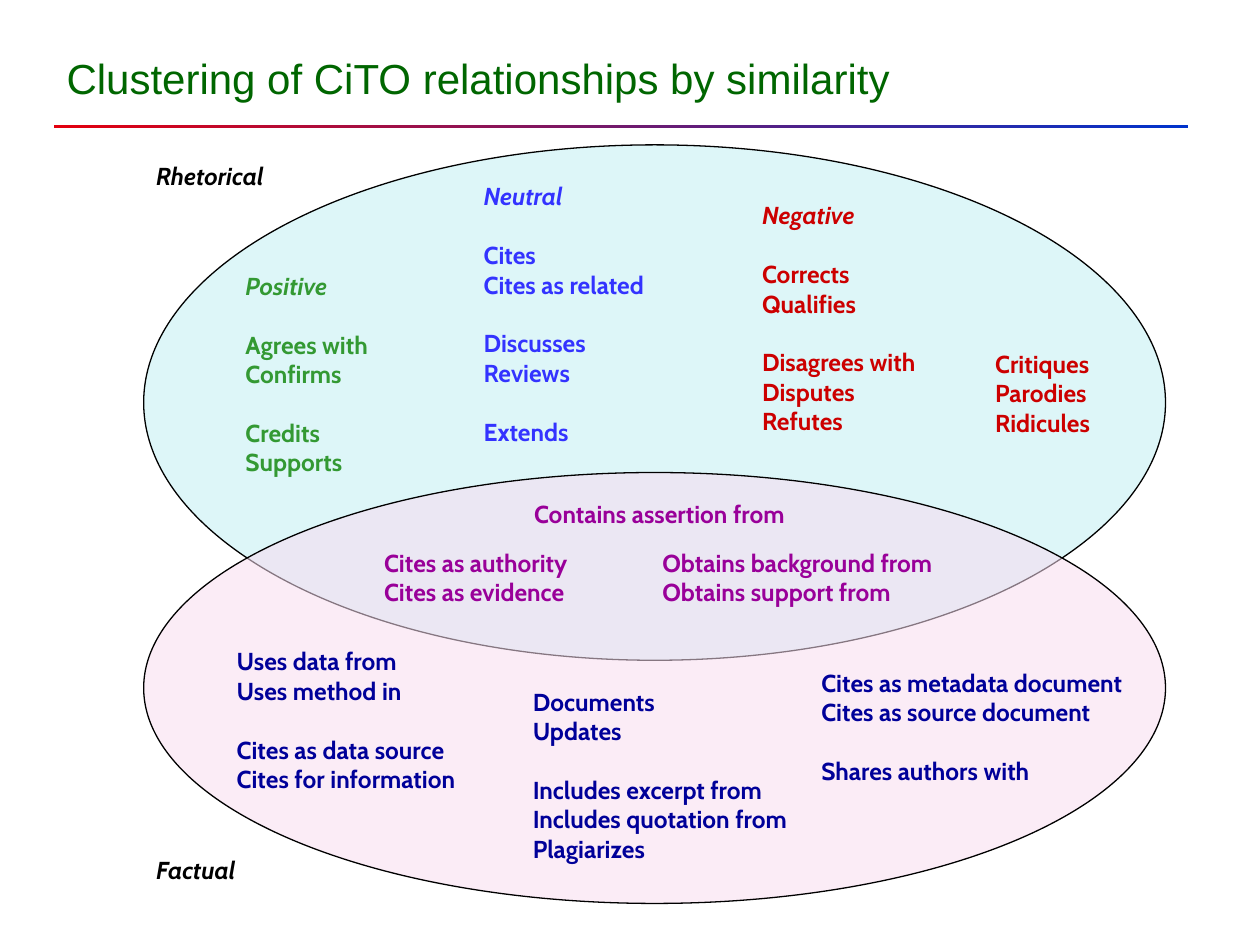
from dataclasses import dataclass

from lxml.etree import SubElement
from pptx import Presentation
from pptx.dml.color import RGBColor
from pptx.enum.shapes import MSO_SHAPE as Shape
from pptx.enum.text import MSO_ANCHOR as Anchor, MSO_AUTO_SIZE as AutoSize
from pptx.oxml.ns import qn
from pptx.util import Inches, Pt

COLUMNS, ROWS = 100, 75


@dataclass(frozen=True)
class Theme:
    title_font: str = "Arial"
    body_font: str = "Cabin"
    title_size: int = 24
    body_size: int = 14
    line_pitch: float = 16.8  # points from one body line to the next
    heading: str = "006600"
    label: str = "000000"
    positive: str = "339933"
    neutral: str = "3333FF"
    negative: str = "CC0000"
    shared: str = "990099"
    factual: str = "000099"
    rhetorical_fill: str = "C4EFF4"
    factual_fill: str = "F8DCF0"
    rule: tuple = ("E3000E", "0033CC")


class Painter:
    def __init__(self, deck, theme):
        self.deck, self.theme = deck, theme
        self.page = deck.slides.add_slide(deck.slide_layouts[6])

    def place(self, left, top, width, height):
        """Turn grid columns and rows into slide lengths."""
        across = self.deck.slide_width / COLUMNS
        down = self.deck.slide_height / ROWS
        return [round(n) for n in
                (left * across, top * down, width * across, height * down)]

    def shape(self, kind, *cells):
        shape = self.page.shapes.add_shape(kind, *self.place(*cells))
        shape.shadow.inherit = False
        return shape

    def rule(self, *cells):
        bar = self.shape(Shape.RECTANGLE, *cells)
        bar.line.fill.background()
        bar.fill.gradient()
        bar.fill.gradient_angle = 0
        for stop, color in zip(bar.fill.gradient_stops, self.theme.rule):
            stop.color.rgb = RGBColor.from_string(color)

    def ellipse(self, *cells, color, opacity):
        oval = self.shape(Shape.OVAL, *cells)
        oval.fill.solid()
        oval.fill.fore_color.rgb = RGBColor.from_string(color)
        tint = oval.fill._xPr.find(qn("a:solidFill"))[0]
        SubElement(tint, qn("a:alpha"), val=str(opacity * 1000))
        oval.line.color.rgb = RGBColor.from_string(self.theme.label)
        oval.line.width = Pt(0.75)

    def span(self, para, text, font, size, color, bold=False, italic=False):
        span = para.add_run()
        span.text = text
        span.font.name, span.font.size = font, Pt(size)
        span.font.bold, span.font.italic = bold, italic
        span.font.color.rgb = RGBColor.from_string(color)

    def title(self, text, *cells):
        frame = self.page.shapes.add_textbox(*self.place(*cells)).text_frame
        frame.word_wrap = True
        frame.vertical_anchor = Anchor.BOTTOM
        self.span(frame.paragraphs[0], text, self.theme.title_font,
                  self.theme.title_size, self.theme.heading)

    def terms(self, left, top, width, color, *clusters, headed=False):
        """Stack clusters of terms, one empty line's height apart."""
        theme = self.theme
        lines = sum(map(len, clusters)) + len(clusters) - 1
        height = lines * theme.line_pitch / 7.2 + 1
        box = self.page.shapes.add_textbox(*self.place(left, top, width, height))
        frame = box.text_frame
        frame.word_wrap = False
        frame.auto_size = AutoSize.SHAPE_TO_FIT_TEXT
        for c, cluster in enumerate(clusters):
            for t, term in enumerate(cluster):
                first = c == t == 0
                para = frame.paragraphs[0] if first else frame.add_paragraph()
                if c and t == 0:
                    para.space_before = Pt(theme.line_pitch)
                self.span(para, term, theme.body_font, theme.body_size, color,
                          bold=True, italic=headed and first)


def main():
    deck = Presentation()
    deck.slide_width, deck.slide_height = Inches(10), Inches(7.5)
    theme = Theme()
    slide = Painter(deck, theme)

    slide.rule(4.3, 9.9, 90, 0.3)
    slide.title("Clustering of CiTO relationships by similarity", 4.3, 3.6, 90.6, 5.1)
    slide.ellipse(11.4, 11.5, 81.1, 40.9, color=theme.rhetorical_fill, opacity=56)
    slide.ellipse(11.4, 37.5, 81.1, 34.2, color=theme.factual_fill, opacity=54)

    slide.terms(18.5, 21, 13, theme.positive, ["Positive"],
                ["Agrees with", "Confirms"], ["Credits", "Supports"], headed=True)
    slide.terms(37.4, 13.9, 16.3, theme.neutral, ["Neutral"],
                ["Cites", "Cites as related"], ["Discusses", "Reviews"],
                ["Extends"], headed=True)
    slide.terms(59.5, 15.4, 15.7, theme.negative, ["Negative"],
                ["Corrects", "Qualifies"],
                ["Disagrees with", "Disputes", "Refutes"], headed=True)
    slide.terms(78, 27.2, 10.6, theme.negative,
                ["Critiques", "Parodies", "Ridicules"])

    slide.terms(29.5, 43, 18.3, theme.shared,
                ["Cites as authority", "Cites as evidence"])
    slide.terms(51.6, 43, 25.7, theme.shared,
                ["Obtains background from", "Obtains support from"])
    slide.terms(41.4, 39.1, 24.3, theme.shared, ["Contains assertion from"])

    slide.terms(17.8, 50.8, 21.1, theme.factual,
                ["Uses data from", "Uses method in"],
                ["Cites as data source", "Cites for information"])
    slide.terms(41.3, 54, 24.1, theme.factual, ["Documents", "Updates"],
                ["Includes excerpt from", "Includes quotation from", "Plagiarizes"])
    slide.terms(64.2, 52.5, 28.3, theme.factual,
                ["Cites as metadata document", "Cites as source document"],
                ["Shares authors with"])

    slide.terms(11.4, 12.3, 11.5, theme.label, ["Rhetorical"], headed=True)
    slide.terms(11.4, 67.4, 8.8, theme.label, ["Factual"], headed=True)
    deck.save("out.pptx")


if __name__ == "__main__":
    main()
